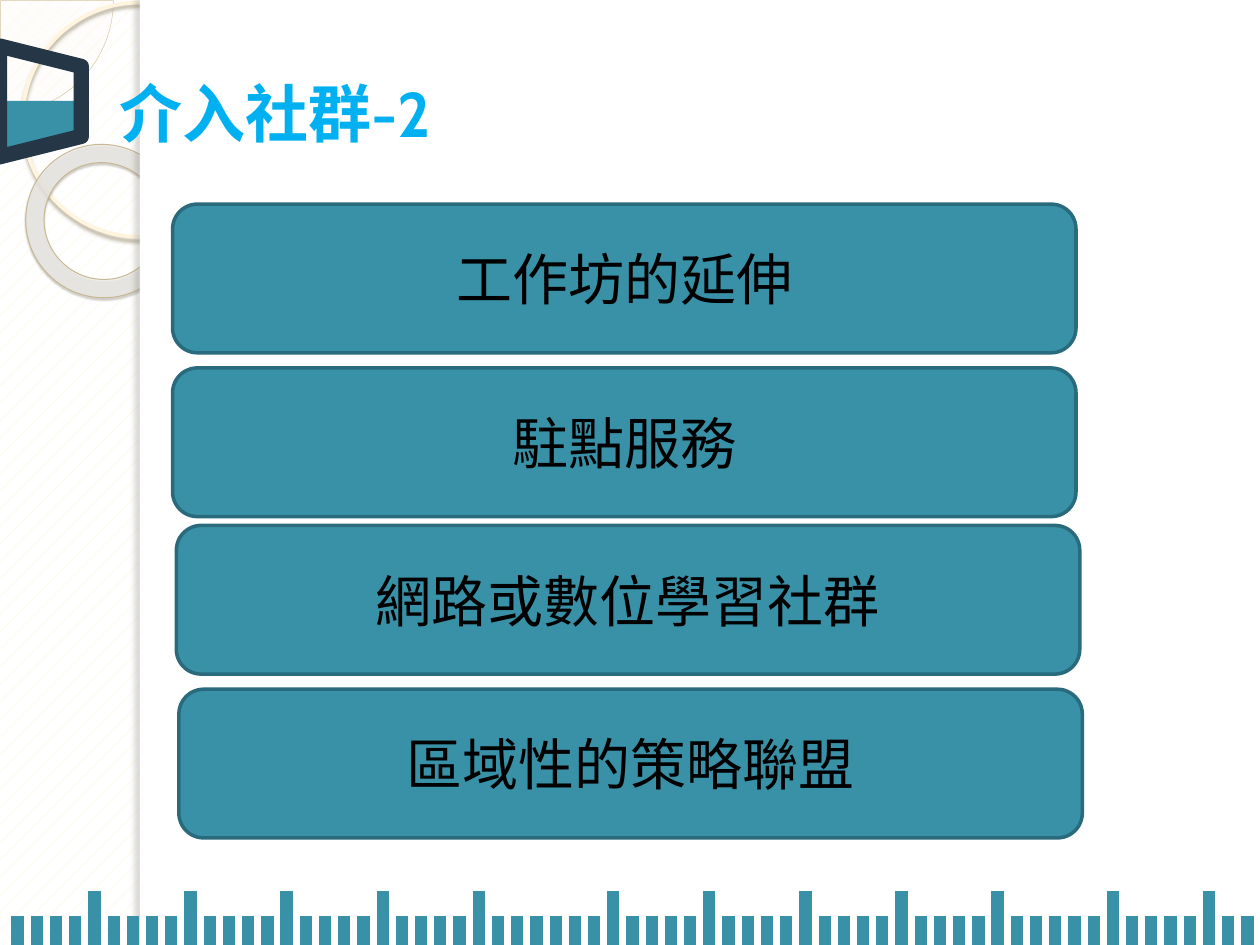
"""Build the community engagement slide with its decorated side band and four topic cards."""
from dataclasses import dataclass
from typing import Optional

from lxml.etree import SubElement
from pptx import Presentation
from pptx.dml.color import RGBColor
from pptx.enum.dml import MSO_PATTERN
from pptx.enum.shapes import MSO_CONNECTOR, MSO_SHAPE as Shape
from pptx.enum.text import MSO_ANCHOR as Anchor, PP_ALIGN as Align
from pptx.oxml.ns import qn
from pptx.util import Inches, Pt


@dataclass(frozen=True)
class Theme:
    teal: str = "3891A7"
    teal_dark: str = "296B7C"
    navy: str = "253646"
    sky: str = "00B0F0"
    white: str = "FFFFFF"
    black: str = "000000"
    pattern: str = "FFF1CE"
    font: str = "Cabin"
    title_size: float = 36
    card_size: float = 32


@dataclass(frozen=True)
class Shadow:
    color: str
    alpha: int
    blur: float
    distance: float
    angle: int


@dataclass(frozen=True)
class Ornament:
    kind: Shape
    left: float
    top: float
    width: float
    height: float
    fill: Optional[str] = None
    alpha: int = 100
    line: Optional[str] = None
    line_width: float = 0
    rotation: float = 0
    adjustments: tuple[float, ...] = ()
    shadow: Optional[Shadow] = None


@dataclass(frozen=True)
class Card:
    text: str
    left: float
    top: float


THEME = Theme()
CARD_WIDTH, CARD_HEIGHT = 7.17, 1.18
BAR_COUNT, BAR_START, BAR_STEP = 65, 0.14, 0.1525
BAR_TOP, TALL_BAR_TOP, BAR_BOTTOM = 7.27, 7.07, 7.5
TALL_BARS = {*range(4, 25, 5), *range(31, 52, 5), *range(57, 63, 5)}

ORNAMENTS = (
    Ornament(Shape.PIE, -0.89, -0.89, 1.79, 1.79, "FEFAF4", 33, "D3C39F", 0.25,
             adjustments=(0, 54)),
    Ornament(Shape.OVAL, 0.18, 0.02, 1.86, 1.86, line="FFF5DE", line_width=2.15,
             shadow=Shadow("B0A68F", 85, 2, 2, 90)),
    Ornament(Shape.DONUT, 0.2, 1.15, 1.23, 1.21, "EDEBE7", 75, "C7B893", 0.58, 38.6, (0.12,),
             Shadow("5A5444", 35, 1, 1.2, 75)),
    Ornament(Shape.RECTANGLE, 1.11, 0, 8.89, 7.5, THEME.white),
    Ornament(Shape.RECTANGLE, 1.11, 0, 0.08, 7.5, THEME.white,
             shadow=Shadow("736F63", 25, 3, 3, 180)),
)
FRAME = Ornament(Shape.TRAPEZOID, -0.12, 0.48, 0.88, 0.65, line=THEME.navy, line_width=8.75,
                 rotation=90)
WATER = ((0.04, 0.8), (0.69, 0.8), (0.69, 1.03), (0.04, 1.25))
CARDS = (
    Card("工作坊的延伸", 1.37, 1.62),
    Card("駐點服務", 1.37, 2.92),
    Card("網路或數位學習社群", 1.4, 4.17),
    Card("區域性的策略聯盟", 1.42, 5.47),
)


def rgb(color: str) -> RGBColor:
    return RGBColor.from_string(color)


def add_alpha(color_element, alpha: int) -> None:
    SubElement(color_element, qn("a:alpha"), val=str(alpha * 1000))


def add_shadow(shape, shadow: Shadow) -> None:
    effects = shape.element.spPr.find(qn("a:effectLst"))
    outer = SubElement(effects, qn("a:outerShdw"), blurRad=str(Pt(shadow.blur)),
                       dist=str(Pt(shadow.distance)), dir=str(shadow.angle * 60000),
                       algn="ctr", rotWithShape="0")
    add_alpha(SubElement(outer, qn("a:srgbClr"), val=shadow.color), shadow.alpha)


def paint(shape, fill: Optional[str], line: Optional[str], line_width: float = 0) -> None:
    shape.shadow.inherit = False
    if fill:
        shape.fill.solid()
        shape.fill.fore_color.rgb = rgb(fill)
    else:
        shape.fill.background()
    if line:
        shape.line.color.rgb = rgb(line)
        shape.line.width = Pt(line_width)
        SubElement(shape.element.spPr.find(qn("a:ln")), qn("a:round"))
    else:
        shape.line.fill.background()


def add_ornament(page, item: Ornament) -> None:
    shape = page.shapes.add_shape(item.kind, Inches(item.left), Inches(item.top),
                                  Inches(item.width), Inches(item.height))
    shape.rotation = item.rotation
    for index, value in enumerate(item.adjustments):
        shape.adjustments[index] = value
    paint(shape, item.fill, item.line, item.line_width)
    if item.alpha < 100:
        add_alpha(shape.element.spPr.find(qn("a:solidFill"))[0], item.alpha)
    if item.shadow:
        add_shadow(shape, item.shadow)


def add_water(page) -> None:
    points = [(Inches(x), Inches(y)) for x, y in WATER]
    builder = page.shapes.build_freeform(*points[0])
    builder.add_line_segments(points[1:], close=True)
    paint(builder.convert_to_shape(), THEME.teal, None)


def add_bar(page, index: int) -> None:
    x = Inches(BAR_START + index * BAR_STEP)
    top = TALL_BAR_TOP if index in TALL_BARS else BAR_TOP
    bar = page.shapes.add_connector(MSO_CONNECTOR.STRAIGHT, x, Inches(top), x, Inches(BAR_BOTTOM))
    bar.line.color.rgb = rgb(THEME.teal)
    bar.line.width = Pt(7)
    SubElement(bar.element.spPr, qn("a:effectLst"))


def write(box, text: str, size: float, color: str, bold: bool = False):
    box.text_frame.word_wrap = True
    para = box.text_frame.paragraphs[0]
    para.text = text
    font = para.runs[0].font
    font.name, font.size, font.bold = THEME.font, Pt(size), bold
    font.color.rgb = rgb(color)
    return para


def add_title(page) -> None:
    box = page.shapes.add_textbox(Inches(0.85), Inches(0.54), Inches(3.07), Inches(0.71))
    para = write(box, "介入社群-2", THEME.title_size, THEME.sky, bold=True)
    para.space_before = Pt(6)


def add_card(page, card: Card) -> None:
    box = page.shapes.add_shape(Shape.ROUNDED_RECTANGLE, Inches(card.left), Inches(card.top),
                                Inches(CARD_WIDTH), Inches(CARD_HEIGHT))
    paint(box, THEME.teal, THEME.teal_dark, 2)
    box.text_frame.vertical_anchor = Anchor.MIDDLE
    write(box, card.text, THEME.card_size, THEME.black).alignment = Align.CENTER


def main() -> None:
    deck = Presentation()
    deck.slide_width, deck.slide_height = Inches(10), Inches(7.5)
    page = deck.slides.add_slide(deck.slide_layouts[6])
    backdrop = page.background.fill
    backdrop.patterned()
    backdrop.pattern = MSO_PATTERN.PERCENT_5
    backdrop.fore_color.rgb = rgb(THEME.pattern)
    backdrop.back_color.rgb = rgb(THEME.white)
    for item in ORNAMENTS:
        add_ornament(page, item)
    add_water(page)
    add_ornament(page, FRAME)
    for index in range(BAR_COUNT):
        add_bar(page, index)
    add_title(page)
    for card in CARDS:
        add_card(page, card)
    deck.save("out.pptx")


if __name__ == "__main__":
    main()
